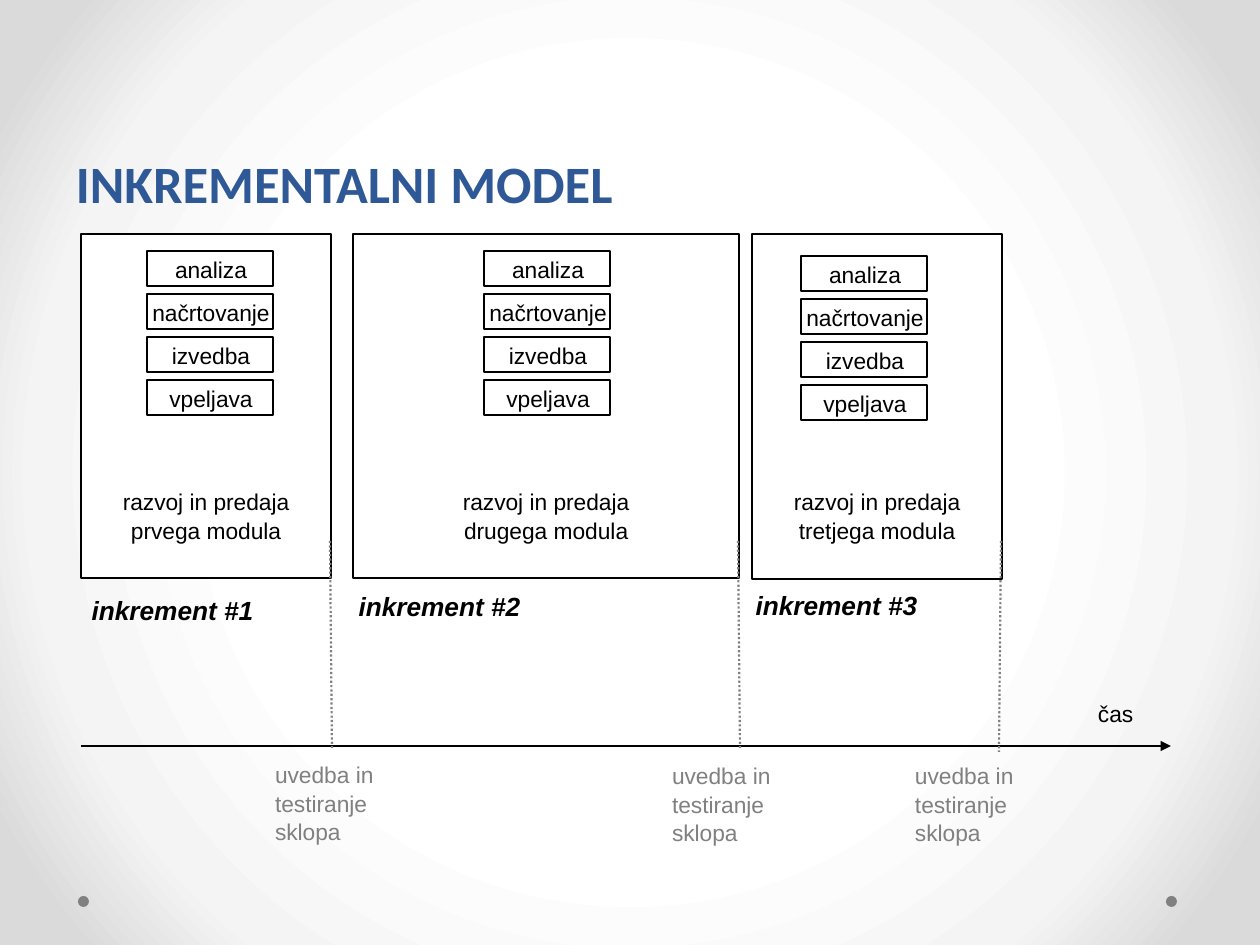
from dataclasses import dataclass

from lxml import etree
from pptx import Presentation
from pptx.dml.color import RGBColor
from pptx.enum.dml import MSO_LINE
from pptx.enum.shapes import MSO_CONNECTOR, MSO_SHAPE
from pptx.enum.text import MSO_ANCHOR, PP_ALIGN
from pptx.oxml import parse_xml
from pptx.oxml.ns import nsdecls, qn
from pptx.util import Emu, Pt

RECTANGLE, OVAL = MSO_SHAPE.RECTANGLE, MSO_SHAPE.OVAL
STRAIGHT = MSO_CONNECTOR.STRAIGHT
LEFT, CENTER = PP_ALIGN.LEFT, PP_ALIGN.CENTER
TOP, BOTTOM = MSO_ANCHOR.TOP, MSO_ANCHOR.BOTTOM
DOTTED = MSO_LINE.ROUND_DOT

EMU_PER_PX = 914400 / 126
SLIDE_SIZE = (1260, 945)


@dataclass(frozen=True)
class Theme:
    ink: str = "000000"
    paper: str = "FFFFFF"
    muted: str = "808080"
    title: str = "2F5897"
    backdrop: tuple = ((0, "FFFFFF"), (50, "FFFFFF"), (76, "F4F4F4"),
                       (92, "DADADA"), (100, "DADADA"))
    body_font: str = "Arial"
    title_font: str = "Calibri"
    body_size: int = 13
    label_size: int = 15
    title_size: int = 30


THEME = Theme()


@dataclass(frozen=True)
class Box:
    left: int
    top: int
    width: int
    height: int


@dataclass(frozen=True)
class TextStyle:
    color: str = THEME.ink
    font: str = THEME.body_font
    size: int = THEME.body_size
    bold: bool = False
    italic: bool = False
    align: PP_ALIGN = LEFT
    anchor: MSO_ANCHOR = TOP
    insets: tuple = (13, 6, 13, 6)
    spacing: float | Pt = 1.0


@dataclass(frozen=True)
class Increment:
    panel: Box
    summary: str
    stages_left: int
    stages_top: int
    label: str
    label_at: tuple
    marker_end: tuple
    note_at: tuple


TITLE = TextStyle(THEME.title, THEME.title_font, THEME.title_size, bold=True,
                  anchor=BOTTOM, spacing=Pt(58))
SUMMARY = TextStyle(align=CENTER, insets=(13, 253, 13, 6), spacing=1.04)
STAGE = TextStyle(align=CENTER, insets=(2, 5, 0, 0))
LABEL = TextStyle(size=THEME.label_size, bold=True, italic=True, align=CENTER,
                  insets=(0, 0, 0, 0))
NOTE = TextStyle(THEME.muted, spacing=1.04)
PLAIN = TextStyle()

STAGES = ("analiza", "načrtovanje", "izvedba", "vpeljava")
STAGE_SIZE = (126, 35)
STAGE_STEP = 43
NOTE_TEXT = "uvedba in testiranje sklopa"
MARKER_TOP = 541
INCREMENTS = (
    Increment(Box(81, 234, 250, 344), "razvoj in predaja prvega modula", 147, 251,
              "inkrement #1", (82, 594), (332, 748), (262, 754)),
    Increment(Box(353, 234, 386, 344), "razvoj in predaja\ndrugega modula", 484, 251,
              "inkrement #2", (349, 590), (740, 748), (659, 755)),
    Increment(Box(752, 234, 250, 345), "razvoj in predaja tretjega modula", 801, 256,
              "inkrement #3", (746, 589), (999, 752), (902, 755)),
)


def px(value: int) -> Emu:
    return Emu(round(value * EMU_PER_PX))


def place(box: Box) -> tuple:
    return tuple(px(value) for value in (box.left, box.top, box.width, box.height))


def assign(target, values: dict) -> None:
    for name, value in values.items():
        setattr(target, name, value)


def write(shape, text: str, style: TextStyle) -> None:
    frame = shape.text_frame
    left, top, right, bottom = map(px, style.insets)
    assign(frame, dict(word_wrap=True, vertical_anchor=style.anchor, margin_left=left,
                       margin_top=top, margin_right=right, margin_bottom=bottom,
                       text=text))
    for paragraph in frame.paragraphs:
        assign(paragraph, dict(alignment=style.align, line_spacing=style.spacing))
        for run in paragraph.runs:
            assign(run.font, dict(name=style.font, size=Pt(style.size),
                                  bold=style.bold, italic=style.italic))
            run.font.color.rgb = RGBColor.from_string(style.color)


def add_text(slide, box: Box, text: str, style: TextStyle) -> None:
    write(slide.shapes.add_textbox(*place(box)), text, style)


def add_frame(slide, box: Box, line_width: float, text: str, style: TextStyle) -> None:
    """Draw a white outlined rectangle with text in it."""
    shape = slide.shapes.add_shape(RECTANGLE, *place(box))
    shape.shadow.inherit = False
    shape.fill.solid()
    shape.fill.fore_color.rgb = RGBColor.from_string(THEME.paper)
    shape.line.color.rgb = RGBColor.from_string(THEME.ink)
    shape.line.width = Pt(line_width)
    write(shape, text, style)


def add_dot(slide, box: Box) -> None:
    shape = slide.shapes.add_shape(OVAL, *place(box))
    shape.shadow.inherit = False
    shape.fill.solid()
    shape.fill.fore_color.rgb = RGBColor.from_string(THEME.muted)
    shape.line.fill.background()


def add_line(slide, start: tuple, end: tuple, color: str, width: float,
             dash: MSO_LINE | None = None, arrow: bool = False) -> None:
    connector = slide.shapes.add_connector(STRAIGHT, *map(px, start + end))
    connector.line.color.rgb = RGBColor.from_string(color)
    assign(connector.line, dict(width=Pt(width), dash_style=dash))
    properties = connector.element.spPr
    if arrow:
        etree.SubElement(properties.find(qn("a:ln")), qn("a:tailEnd"), type="triangle")
    etree.SubElement(properties, qn("a:effectLst"))


def paint_background(slide) -> None:
    stops = "".join(f'<a:gs pos="{position * 1000}"><a:srgbClr val="{color}"/></a:gs>'
                    for position, color in THEME.backdrop)
    slide.element.cSld.insert(0, parse_xml(
        f'<p:bg {nsdecls("p", "a")}><p:bgPr><a:gradFill rotWithShape="1">'
        f'<a:gsLst>{stops}</a:gsLst><a:path path="circle">'
        '<a:fillToRect l="50000" t="50000" r="50000" b="50000"/></a:path>'
        '</a:gradFill><a:effectLst/></p:bgPr></p:bg>'))


def add_increment(slide, increment: Increment) -> None:
    panel = increment.panel
    add_frame(slide, panel, 1, increment.summary, SUMMARY)
    for row, stage in enumerate(STAGES):
        top = increment.stages_top + row * STAGE_STEP
        add_frame(slide, Box(increment.stages_left, top, *STAGE_SIZE), 0.75, stage, STAGE)
    add_text(slide, Box(*increment.label_at, 181, 48), increment.label, LABEL)
    add_line(slide, (panel.left + panel.width - 1, MARKER_TOP), increment.marker_end,
             THEME.muted, 1.25, dash=DOTTED)
    add_text(slide, Box(*increment.note_at, 159, 135), NOTE_TEXT, NOTE)


def main() -> None:
    presentation = Presentation()
    presentation.slide_width, presentation.slide_height = map(px, SLIDE_SIZE)
    slide = presentation.slides.add_slide(presentation.slide_layouts[6])
    paint_background(slide)
    for left in (78, 1166):
        add_dot(slide, Box(left, 896, 11, 11))
    add_text(slide, Box(63, 0, 1134, 220), "INKREMENTALNI MODEL", TITLE)
    add_line(slide, (81, 746), (1171, 746), THEME.ink, 1, arrow=True)
    add_text(slide, Box(1085, 694, 91, 50), "čas", PLAIN)
    for increment in INCREMENTS:
        add_increment(slide, increment)
    presentation.save("out.pptx")


if __name__ == "__main__":
    main()
